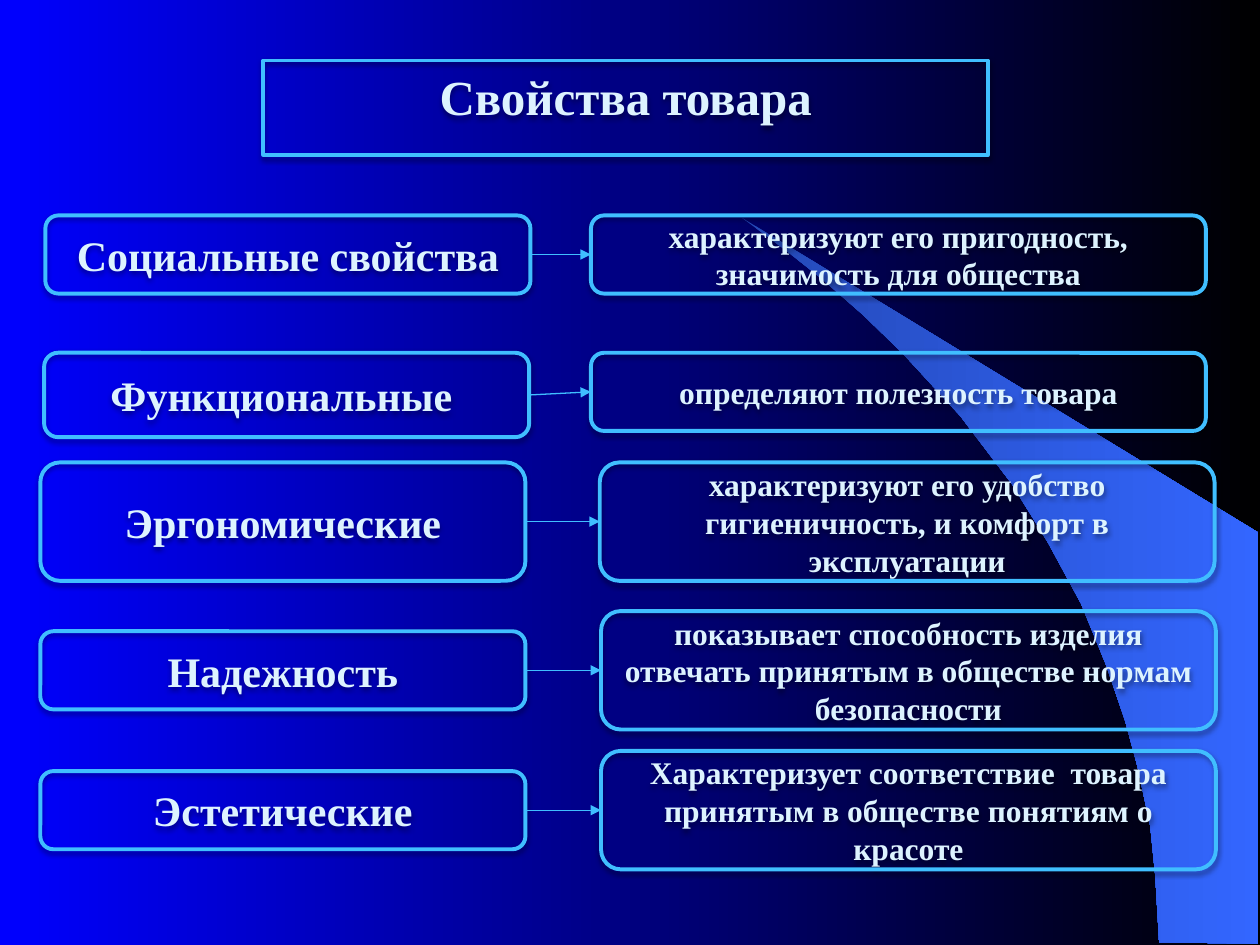
from lxml import etree
from pptx import Presentation
from pptx import util as u
from pptx.dml.color import RGBColor
from pptx.enum import shapes, text
from pptx.oxml import ns

PX = u.Inches(1) // 100
FONT = "Times New Roman"
BLUE = RGBColor(0x00, 0x00, 0xFF)
BLACK = RGBColor(0x00, 0x00, 0x00)
SKY = RGBColor(0x40, 0xBE, 0xFF)
PALE = RGBColor(0xDD, 0xF3, 0xFF)
SAIL_DARK = RGBColor(0x24, 0x49, 0xB6)
SAIL_LIGHT = RGBColor(0x33, 0x66, 0xFF)

LABEL_W, DETAIL_W = 385, 488
SAIL = [
    (920, 748), (999, 749), (999, 423), (589, 173), (624, 199), (653, 222),
    (685, 250), (716, 280), (762, 330), (803, 384), (832, 431), (858, 479),
    (878, 528), (893, 572), (903, 609), (913, 656), (917, 696),
]
ROWS = [
    ("Социальные свойства", (36, 171, LABEL_W, 62),
     "характеризуют его пригодность, значимость для общества", (469, 171, DETAIL_W, 62)),
    ("Функциональные ", (35, 280, LABEL_W, 67),
     "определяют полезность товара", (469, 280, DETAIL_W, 62)),
    ("Эргономические", (32, 367, LABEL_W, 94),
     "характеризуют его удобство гигиеничность, и комфорт в эксплуатации",
     (476, 367, DETAIL_W, 94)),
    ("Надежность", (32, 501, LABEL_W, 62),
     "показывает способность изделия отвечать принятым в обществе нормам безопасности",
     (477, 485, DETAIL_W, 94)),
    ("Эстетические", (32, 612, LABEL_W, 62),
     "Характеризует соответствие  товара принятым в обществе понятиям о красоте",
     (477, 596, DETAIL_W, 94)),
]


def sub(parent, tag, **attrs):
    return etree.SubElement(parent, ns.qn(tag), attrs)


def set_gradient(fill, start, end):
    fill.gradient()
    fill.gradient_angle = 0
    for stop, position, color in zip(fill.gradient_stops, (0, 1), (start, end)):
        stop.position = position
        stop.color.rgb = color


def add_shadow(sp):
    sp.shadow.inherit = False
    effects = sp._element.spPr.find(ns.qn("a:effectLst"))
    shadow = sub(effects, "a:outerShdw", blurRad="40000", dist="20000",
                 dir="5400000", rotWithShape="0")
    color = sub(shadow, "a:srgbClr", val=str(BLACK))
    sub(color, "a:alpha", val="38000")


def style_box(sp, words, size, anchor):
    sp.fill.background()
    sp.line.color.rgb = SKY
    sp.line.width = u.Pt(2.25)
    add_shadow(sp)
    tf = sp.text_frame
    tf.word_wrap = True
    tf.auto_size = text.MSO_AUTO_SIZE.NONE
    tf.vertical_anchor = anchor
    p = tf.paragraphs[0]
    p.alignment = text.PP_ALIGN.CENTER
    p.line_spacing = 1.0
    p.space_before = u.Pt(size * 0.2)
    r = p.add_run()
    r.text = words
    r.font.name = FONT
    r.font.size = u.Pt(size)
    r.font.bold = True
    r.font.color.rgb = PALE


def add_title(s, box):
    sp = s.shapes.title
    sp.left, sp.top, sp.width, sp.height = [v * PX for v in box]
    geometry = etree.Element(ns.qn("a:prstGeom"), prst="roundRect")
    sub(geometry, "a:avLst")
    sp._element.spPr.insert(1, geometry)
    style_box(sp, "Свойства товара", 28, text.MSO_ANCHOR.TOP)


def add_box(s, words, box, size):
    sp = s.shapes.add_shape(shapes.MSO_SHAPE.ROUNDED_RECTANGLE, *[v * PX for v in box])
    style_box(sp, words, size, text.MSO_ANCHOR.MIDDLE)
    return sp


def add_arrow(s, label, detail):
    line = s.shapes.add_connector(shapes.MSO_CONNECTOR.STRAIGHT, 0, 0, 0, 0)
    line.begin_connect(label, 3)
    line.end_connect(detail, 1)
    line.line.color.rgb = SKY
    line.line.width = u.Pt(0.75)
    sub(line.line._get_or_add_ln(), "a:tailEnd", type="triangle")
    sub(line._element.spPr, "a:effectLst")


def add_row(s, label, label_box, detail, detail_box):
    left = add_box(s, label, label_box, 24)
    right = add_box(s, detail, detail_box, 18)
    add_arrow(s, left, right)


def add_sail(s):
    builder = s.shapes.build_freeform(*SAIL[0], scale=PX)
    builder.add_line_segments(SAIL[1:], close=True)
    sp = builder.convert_to_shape()
    set_gradient(sp.fill, SAIL_DARK, SAIL_LIGHT)
    sp.line.fill.background()
    sp.shadow.inherit = False


def main():
    prs = Presentation()
    prs.slide_width, prs.slide_height = 1000 * PX, 750 * PX
    s = prs.slides.add_slide(prs.slide_layouts[5])
    set_gradient(s.background.fill, BLUE, BLACK)
    add_sail(s)
    add_title(s, (209, 48, 575, 75))
    for row in ROWS:
        add_row(s, *row)
    prs.save("out.pptx")


if __name__ == "__main__":
    main()
